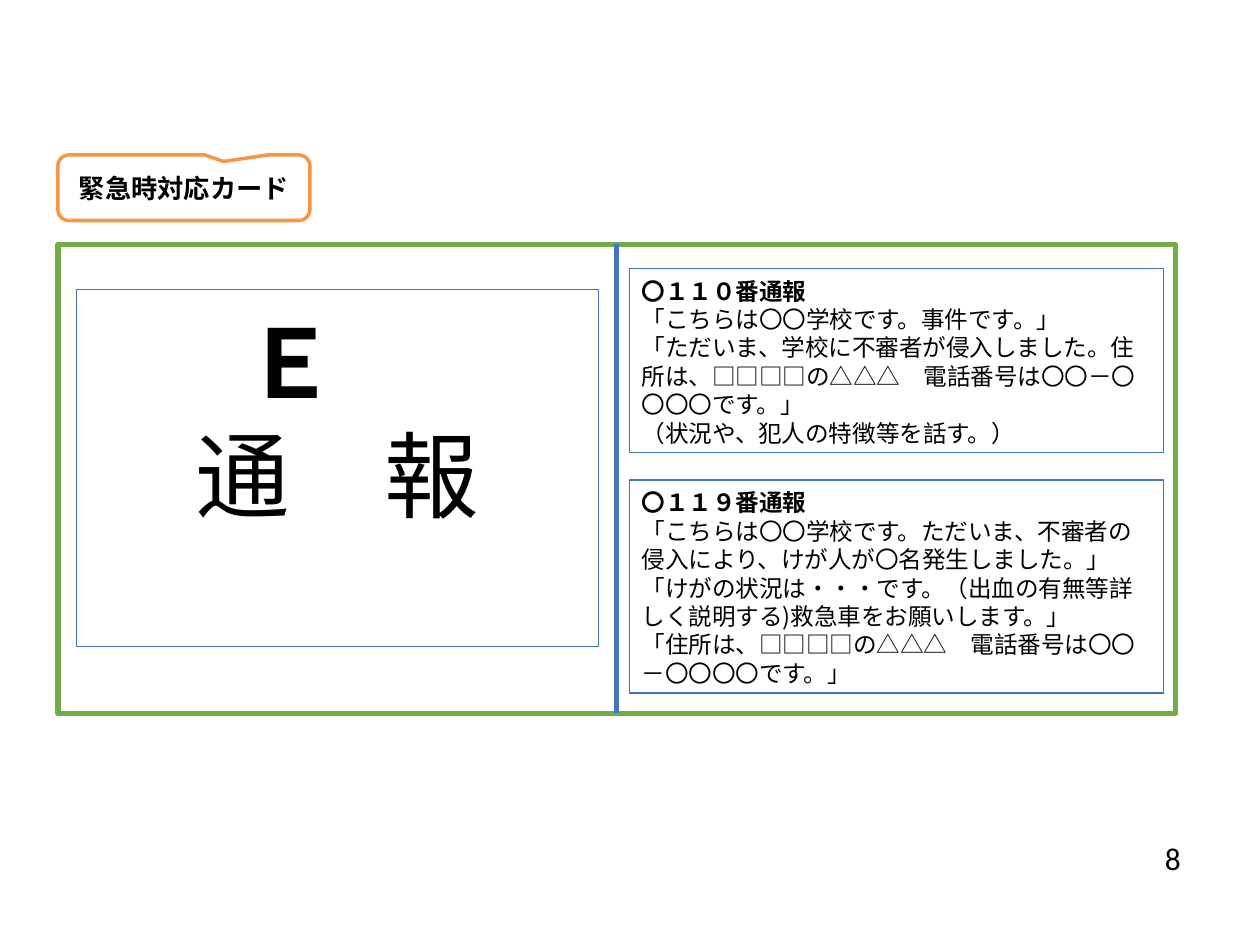
from dataclasses import dataclass

from lxml import etree
from pptx import Presentation
from pptx.dml.color import RGBColor
from pptx.enum.shapes import MSO_CONNECTOR, MSO_SHAPE
from pptx.enum.text import MSO_ANCHOR, PP_ALIGN
from pptx.oxml.ns import qn
from pptx.util import Inches, Pt

RECT = MSO_SHAPE.RECTANGLE
CALLOUT = MSO_SHAPE.ROUNDED_RECTANGULAR_CALLOUT
STRAIGHT = MSO_CONNECTOR.STRAIGHT
TOP, MIDDLE = MSO_ANCHOR.TOP, MSO_ANCHOR.MIDDLE
LEFT, CENTER, RIGHT = PP_ALIGN.LEFT, PP_ALIGN.CENTER, PP_ALIGN.RIGHT


@dataclass(frozen=True)
class Theme:
    white: str = "FFFFFF"
    ink: str = "000000"
    green: str = "70AD47"
    orange: str = "F79646"
    blue: str = "4472C4"
    japanese: str = "Noto Sans CJK JP"
    label_font: str = "Cambria"
    number_font: str = "Calibri"
    heading: float = 54
    body: float = 13.5
    label: float = 15
    number: float = 18
    leading: float = 1.2


THEME = Theme()

CALL_110 = [
    "〇１１０番通報",
    "「こちらは〇〇学校です。事件です。」",
    "「ただいま、学校に不審者が侵入しました。住",
    "所は、□□□□の△△△　電話番号は〇〇－〇",
    "〇〇〇です。」",
    "（状況や、犯人の特徴等を話す。）",
]
CALL_119 = [
    "〇１１９番通報",
    "「こちらは〇〇学校です。ただいま、不審者の",
    "侵入により、けが人が〇名発生しました。」",
    "「けがの状況は・・・です。（出血の有無等詳",
    "しく説明する)救急車をお願いします。」",
    "「住所は、□□□□の△△△　電話番号は〇〇",
    "－〇〇〇〇です。」",
]


def add_box(slide, box, line, width, fill=None, kind=RECT):
    sp = slide.shapes.add_shape(kind, *map(Inches, box))
    sp.shadow.inherit = False
    if fill:
        sp.fill.solid()
        sp.fill.fore_color.rgb = RGBColor.from_string(fill)
    else:
        sp.fill.background()
    sp.line.color.rgb = RGBColor.from_string(line)
    sp.line.width = Pt(width)
    return sp


def write_lines(sp, lines, size, font, align=LEFT, anchor=TOP, leading=None, **frame):
    """Write one paragraph per line; the first is bold unless it is a number."""
    tf = sp.text_frame
    settings = {"word_wrap": True, "vertical_anchor": anchor, **frame}
    for name, value in settings.items():
        setattr(tf, name, value)
    for i, text in enumerate(lines):
        p = tf.paragraphs[0] if i == 0 else tf.add_paragraph()
        p.alignment = align
        if leading:
            p.line_spacing = Pt(size * leading)
        r = p.add_run()
        r.text = text
        bold = i == 0 and not text.isdecimal()
        for name, value in {"size": Pt(size), "name": font, "bold": bold}.items():
            setattr(r.font, name, value)
        r.font.color.rgb = RGBColor.from_string(THEME.ink)
        east_asian = etree.SubElement(r._r.get_or_add_rPr(), qn("a:ea"))
        east_asian.set("typeface", THEME.japanese)


def add_label(slide, box):
    sp = add_box(slide, box, THEME.orange, 2, THEME.white, CALLOUT)
    for i, value in enumerate((0.157, -0.401, 0.167)):
        sp.adjustments[i] = value
    side, end = Inches(0.07), Inches(0.04)
    write_lines(sp, ["緊急時対応カード"], THEME.label, THEME.label_font, CENTER, MIDDLE,
                margin_left=side, margin_right=side, margin_top=end, margin_bottom=end)


def add_divider(slide, x, top, bottom):
    line = slide.shapes.add_connector(STRAIGHT, *map(Inches, (x, top, x, bottom)))
    line.line.color.rgb = RGBColor.from_string(THEME.blue)
    line.line.width = Pt(3)
    etree.SubElement(line._element.spPr, qn("a:effectLst"))


def add_panel(slide, box, lines, size, align=LEFT):
    """Thin blue box whose top margin grows with the type size."""
    sp = add_box(slide, box, THEME.blue, 0.75)
    write_lines(sp, lines, size, THEME.japanese, align, leading=THEME.leading,
                margin_top=Inches(0.05 + 0.08 * size / 72))


def add_card(slide, box):
    left, top, width, height = box
    add_box(slide, box, THEME.green, 3, THEME.white)
    middle = left + width / 2
    add_divider(slide, middle, top, top + height)
    add_panel(slide, (left + 0.15, top + 0.36, 4.14, 2.83),
              ["Ｅ　", "通　報"], THEME.heading, CENTER)
    for offset, panel_height, lines in ((0.19, 1.46, CALL_110), (1.87, 1.69, CALL_119)):
        add_panel(slide, (middle + 0.1, top + offset, 4.24, panel_height),
                  lines, THEME.body)


def add_page_number(slide, box):
    sp = slide.shapes.add_textbox(*map(Inches, box))
    write_lines(sp, ["8"], THEME.number, THEME.number_font, RIGHT, MIDDLE)


def main():
    prs = Presentation()
    prs.slide_width, prs.slide_height = Inches(10), Inches(7.5)
    slide = prs.slides.add_slide(prs.slide_layouts[6])
    add_card(slide, (0.46, 1.94, 8.87, 3.72))
    add_label(slide, (0.46, 1.23, 2, 0.52))
    add_page_number(slide, (7.39, 6.56, 2.08, 0.5))
    prs.save("out.pptx")


if __name__ == "__main__":
    main()
